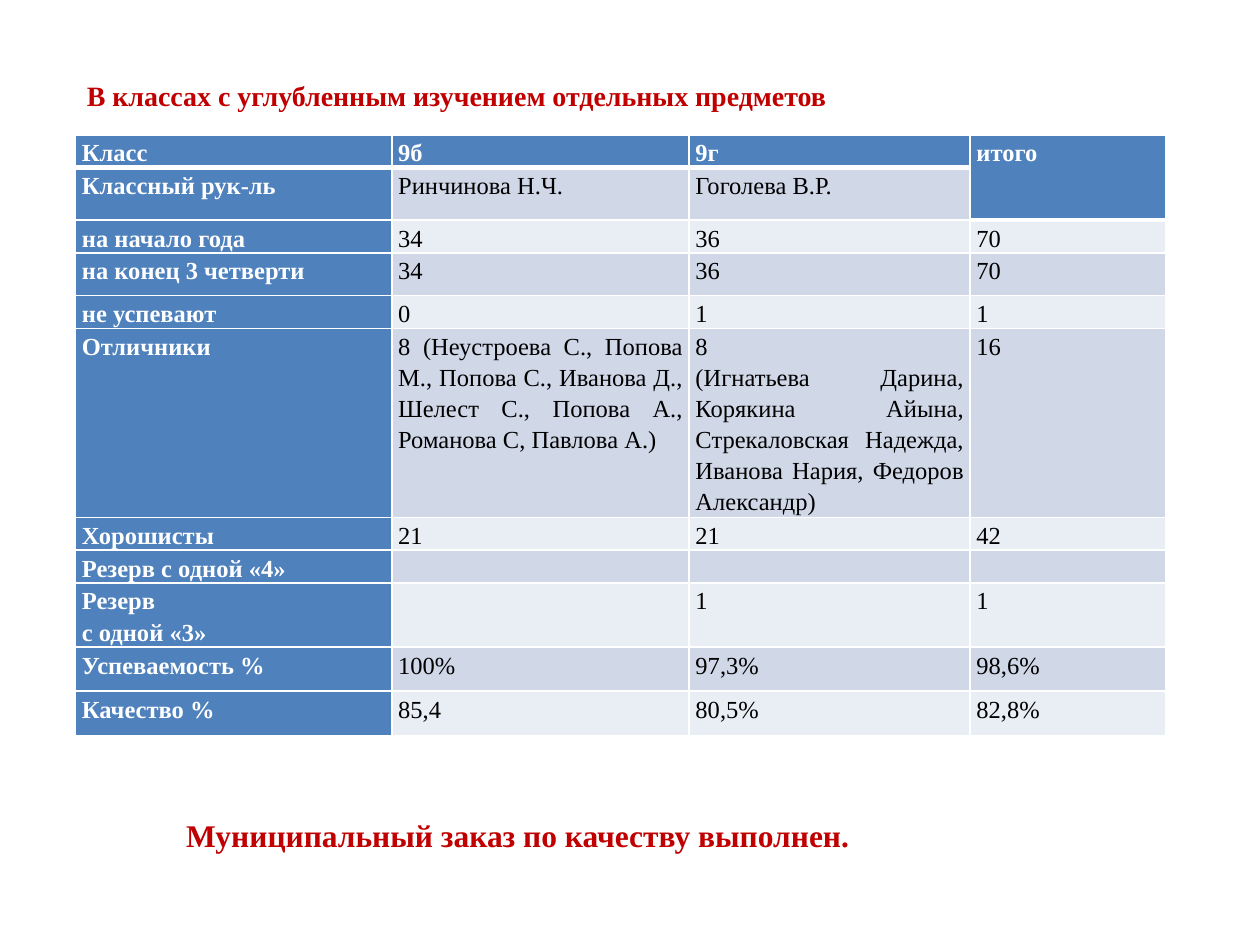
from pptx import Presentation
from pptx import util as u
from pptx.dml import color
from pptx.enum import text
from pptx.oxml import parse_xml
from pptx.oxml.ns import nsdecls

FONT = "Times New Roman"
WHITE, BLACK, RED, BLUE = "FFFFFF", "000000", "C00000", "4F81BD"
BANDS = ["E9EDF4", "D0D8E8"]


def rgb(value):
    return color.RGBColor.from_string(value)


def set_font(p, size, value, bold):
    f = p.font
    f.name, f.size, f.bold = FONT, u.Pt(size), bold
    f.color.rgb = rgb(value)


prs = Presentation()
prs.slide_width, prs.slide_height = u.Inches(10), u.Inches(7.5)
s = prs.slides.add_slide(prs.slide_layouts[6])

# Class results table
rows = [
    ["Класс", "9б", "9г", "итого"],
    ["Классный рук-ль", "Ринчинова Н.Ч.", "Гоголева В.Р.", ""],
    ["на начало года", "34", "36", "70"],
    ["на конец 3 четверти", "34", "36", "70"],
    ["не успевают", "0", "1", "1"],
    ["Отличники",
     "8 (Неустроева С., Попова М., Попова С., Иванова Д., Шелест С., "
     "Попова А., Романова С, Павлова А.)",
     "8\n(Игнатьева Дарина, Корякина Айына, Стрекаловская Надежда, "
     "Иванова Нария, Федоров Александр)",
     "16"],
    ["Хорошисты", "21", "21", "42"],
    ["Резерв с одной «4»", "", "", ""],
    ["Резерв\nс одной «3»", "", "1", "1"],
    ["Успеваемость %", "100%", "97,3%", "98,6%"],
    ["Качество %", "85,4", "80,5%", "82,8%"],
]
widths = [2.51, 2.36, 2.23, 1.55]
heights = [0.25, 0.42, 0.26, 0.34, 0.26, 1.5, 0.26, 0.26, 0.51, 0.35, 0.35]

table = s.shapes.add_table(
    len(rows), len(widths), u.Inches(0.6), u.Inches(1.07),
    u.Inches(sum(widths)), u.Inches(sum(heights))).table
for col, width in zip(table.columns, widths):
    col.width = u.Inches(width)
for row, height in zip(table.rows, heights):
    row.height = u.Inches(height)
table.cell(0, 3).merge(table.cell(1, 3))

for i, row in enumerate(rows):
    for j, value in enumerate(row):
        cell = table.cell(i, j)
        last_head = 1 if j == 3 else 0
        head = i <= last_head or j == 0
        cell.margin_left = cell.margin_right = u.Inches(0.05)
        cell.margin_top, cell.margin_bottom = u.Inches(0.01), 0
        cell.fill.solid()
        cell.fill.fore_color.rgb = rgb(BLUE if head else BANDS[i % 2])

        cell.text_frame.text = value
        for p in cell.text_frame.paragraphs:
            p.alignment = text.PP_ALIGN.JUSTIFY
            p.line_spacing = 1.15
            set_font(p, 14, WHITE if head else BLACK, head)
            if not value:
                p._p.get_or_add_endParaRPr().set("sz", "1400")

        # White borders, thick below the header
        edges = {"L": 1, "R": 1,
                 "T": 3 if i == last_head + 1 else 1,
                 "B": 3 if i <= last_head else 1}
        for k, (side, width) in enumerate(edges.items()):
            cell._tc.get_or_add_tcPr().insert(k, parse_xml(
                f'<a:ln{side} {nsdecls("a")} w="{u.Pt(width)}"><a:solidFill>'
                f'<a:srgbClr val="{WHITE}"/></a:solidFill></a:ln{side}>'))

# Heading and conclusion
captions = [
    ("В классах с углубленным изучением отдельных предметов",
     0.59, 0.57, 7.95, 0.37, 16, text.MSO_ANCHOR.MIDDLE),
    ("Муниципальный заказ по качеству выполнен.",
     1.38, 6.43, 6.93, 0.4, 18, text.MSO_ANCHOR.TOP),
]
for caption, x, y, w, h, size, anchor in captions:
    tf = s.shapes.add_textbox(*map(u.Inches, (x, y, w, h))).text_frame
    tf.word_wrap = True
    tf.auto_size = text.MSO_AUTO_SIZE.SHAPE_TO_FIT_TEXT
    tf.vertical_anchor = anchor
    p = tf.paragraphs[0]
    p.text = caption
    set_font(p, size, RED, True)

prs.save("out.pptx")
